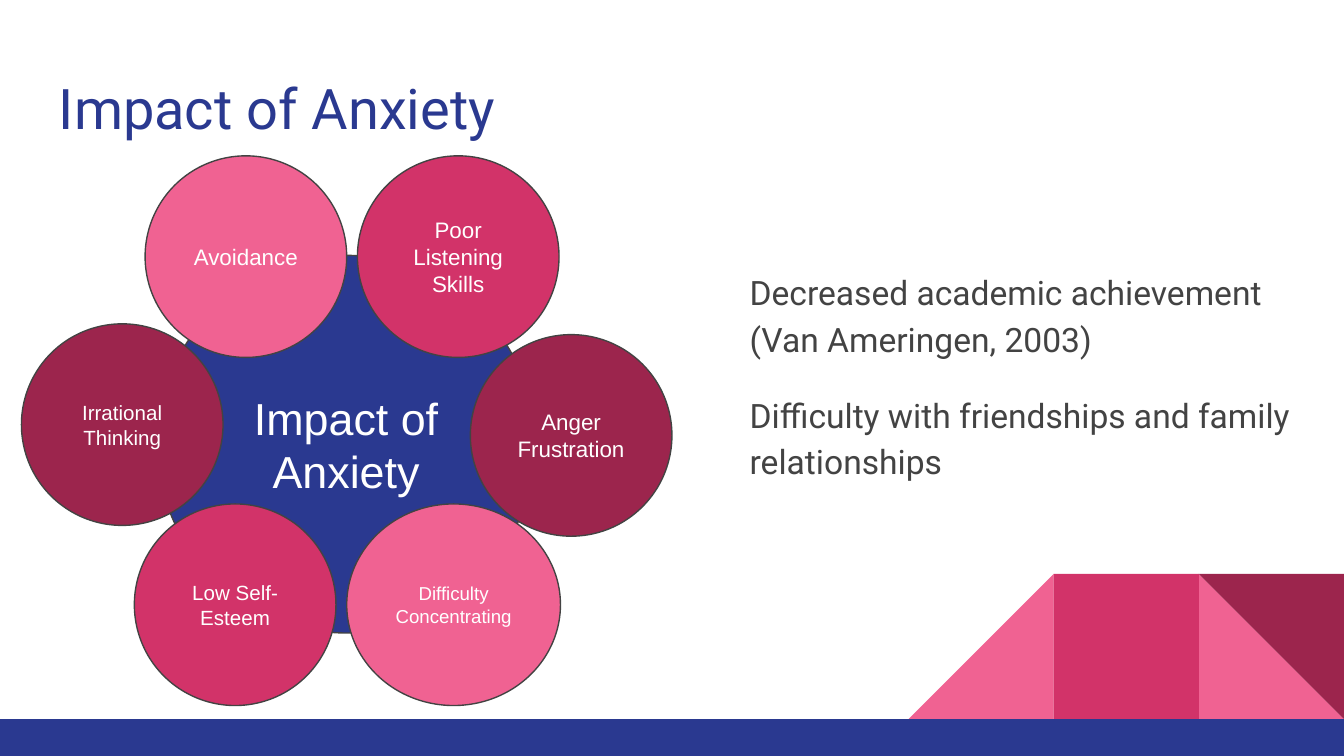
from pptx import Presentation
from pptx.dml.color import RGBColor
from pptx.enum.shapes import MSO_SHAPE
from pptx.enum.text import MSO_ANCHOR, PP_ALIGN
from pptx.util import Inches, Pt

RECTANGLE = MSO_SHAPE.RECTANGLE
TRIANGLE = MSO_SHAPE.RIGHT_TRIANGLE
ELLIPSE = MSO_SHAPE.OVAL
TOP, MIDDLE = MSO_ANCHOR.TOP, MSO_ANCHOR.MIDDLE
LEFT, CENTER = PP_ALIGN.LEFT, PP_ALIGN.CENTER

WHITE = RGBColor(0xFF, 0xFF, 0xFF)
NAVY = RGBColor(0x2A, 0x39, 0x90)
PINK = RGBColor(0xF0, 0x62, 0x92)
ROSE = RGBColor(0xD2, 0x33, 0x69)
WINE = RGBColor(0x9C, 0x25, 0x4D)
GRAY = RGBColor(0x43, 0x43, 0x43)

TILE = 1.08
TILE_TOP = 4.27
PETAL = 1.5
PETALS = [
    ("Avoidance", 1.08, 1.16, PETAL, PINK, 12),
    ("Poor Listening Skills", 2.66, 1.16, PETAL, ROSE, 12),
    ("Anger\nFrustration", 3.5, 2.49, PETAL, WINE, 12),
    ("Difficulty Concentrating", 2.58, 3.75, 1.59, PINK, 10),
    ("Low Self-Esteem", 1, 3.75, PETAL, ROSE, 11),
    ("Irrational Thinking", 0.16, 2.41, PETAL, WINE, 11),
]


def write_text(shape, text, font, size, color, align=LEFT, anchor=TOP):
    frame = shape.text_frame
    frame.word_wrap = True
    frame.vertical_anchor = anchor
    frame.margin_left = frame.margin_right = Inches(0.1)
    frame.margin_top = frame.margin_bottom = Inches(0.1)
    frame.text = text
    for para in frame.paragraphs:
        para.alignment = align
        for span in para.runs:
            span.font.name = font
            span.font.size = Pt(size)
            span.font.color.rgb = color
    return frame


def add_block(page, kind, left, top, width, height, color, rotation=0):
    shape = page.shapes.add_shape(
        kind, Inches(left), Inches(top), Inches(width), Inches(height))
    shape.shadow.inherit = False
    shape.fill.solid()
    shape.fill.fore_color.rgb = color
    shape.line.fill.background()
    shape.rotation = rotation
    return shape


def add_circle(page, text, left, top, width, height, color, size):
    circle = add_block(page, ELLIPSE, left, top, width, height, color)
    circle.line.color.rgb = GRAY
    circle.line.width = Pt(0.75)
    write_text(circle, text, "Arial", size, WHITE, CENTER, MIDDLE)


def add_label(page, text, left, top, width, height, size, color):
    box = page.shapes.add_textbox(
        Inches(left), Inches(top), Inches(width), Inches(height))
    return write_text(box, text, "Roboto", size, color)


def add_footer(page):
    tiles = [
        (TRIANGLE, 2, PINK, 0),
        (TRIANGLE, 0, PINK, 270),
        (RECTANGLE, 1, ROSE, 0),
        (TRIANGLE, 2, WINE, 180),
    ]
    for kind, column, color, rotation in tiles:
        left = 10 - (3 - column) * TILE
        add_block(page, kind, left, TILE_TOP, TILE, TILE, color, rotation)
    add_block(page, RECTANGLE, 0, TILE_TOP + TILE, 10, 0.28, NAVY)


def add_body(page):
    text = ("Decreased academic achievement (Van Ameringen, 2003)\n"
            "Difficulty with friendships and family relationships")
    frame = add_label(page, text, 5.48, 1.88, 4.43, 3.65, 18, GRAY)
    for para in frame.paragraphs:
        para.line_spacing = 1.15
    frame.paragraphs[1].space_before = Pt(16)


def main():
    deck = Presentation()
    deck.slide_width = Inches(10)
    deck.slide_height = Inches(10 * 9 / 16)
    page = deck.slides.add_slide(deck.slide_layouts[6])
    add_footer(page)
    add_circle(page, "Impact of Anxiety", 1.17, 1.9, 2.81, 2.81, NAVY, 24)
    add_label(page, "Impact of Anxiety", 0.34, 0.45, 9.32, 0.66, 30, NAVY)
    add_body(page)
    for text, left, top, width, color, size in PETALS:
        add_circle(page, text, left, top, width, PETAL, color, size)
    deck.save("out.pptx")


if __name__ == "__main__":
    main()
